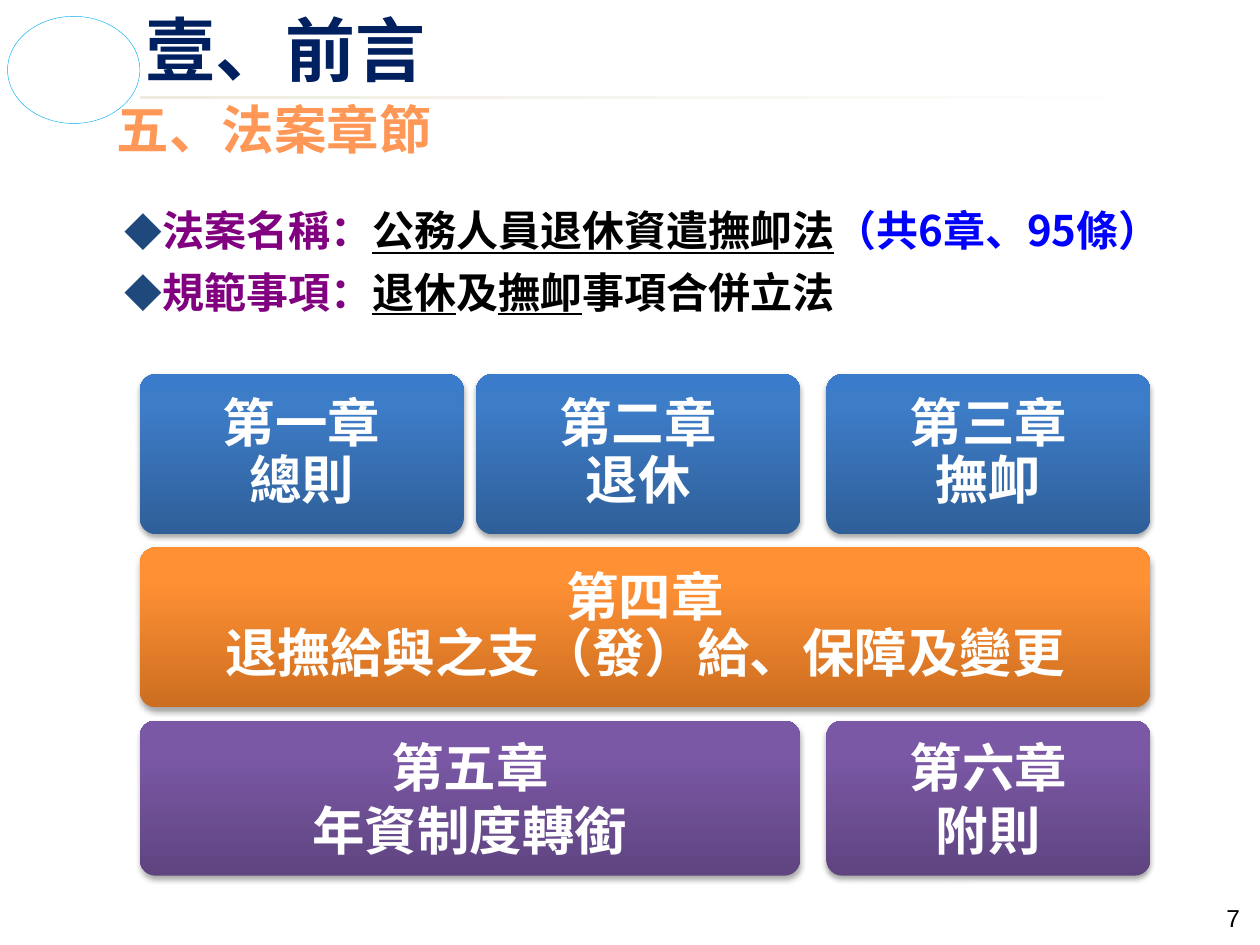
from lxml.etree import SubElement
from pptx import Presentation
from pptx.dml.color import RGBColor
from pptx.enum.shapes import MSO_SHAPE
from pptx.enum.text import MSO_ANCHOR, PP_ALIGN
from pptx.oxml import parse_xml
from pptx.oxml.ns import nsdecls, qn
from pptx.util import Inches, Pt

CJK = "Noto Sans CJK SC"
BLUE = [(0, "2F5F99"), (80, "3D7CC7"), (100, "3A7CCB")]
ORANGE = [(0, "CC6E20"), (80, "FF9034"), (100, "FF9136")]
PURPLE = [(0, "5F4480"), (80, "7B58A6"), (100, "7C57A8")]

LEFT, RIGHT = 1.11, 9.13
CARD_WIDTH = 2.57
SECOND_LEFT, THIRD_LEFT = 3.78, 6.56
ROW_TOP, ROW_PITCH = 2.97, 1.375


def color(hex_string):
    return RGBColor.from_string(hex_string)


def style_font(font, size, name, hex_string, bold=True):
    font.size = Pt(size)
    font.name = name
    font.bold = bold
    font.color.rgb = color(hex_string)
    latin = font._element.find(qn("a:latin"))
    latin.addnext(parse_xml(f'<a:ea {nsdecls("a")} typeface="{CJK}"/>'))


def set_gradient(shape, stops, angle):
    """Fill with (percent, colour) stops; the angle runs clockwise in degrees."""
    stop_xml = "".join(
        f'<a:gs pos="{position * 1000}"><a:srgbClr val="{hex_string}"/></a:gs>'
        for position, hex_string in stops)
    gradient = parse_xml(
        f'<a:gradFill {nsdecls("a")} rotWithShape="1"><a:gsLst>{stop_xml}</a:gsLst>'
        f'<a:lin ang="{angle * 60000}" scaled="0"/></a:gradFill>')
    shape._element.spPr.find(qn("a:prstGeom")).addnext(gradient)


def add_soft_shadow(shape):
    effects = shape._element.spPr.find(qn("a:effectLst"))
    effects.append(parse_xml(
        f'<a:outerShdw {nsdecls("a")} blurRad="40000" dist="23000" dir="5400000" '
        'rotWithShape="0"><a:srgbClr val="000000"><a:alpha val="35000"/>'
        '</a:srgbClr></a:outerShdw>'))


def add_plain_shape(slide, kind, left, top, width, height):
    shape = slide.shapes.add_shape(
        kind, Inches(left), Inches(top), Inches(width), Inches(height))
    shape.shadow.inherit = False
    return shape


def add_decoration(slide):
    bar = add_plain_shape(slide, MSO_SHAPE.RECTANGLE, LEFT, 0.76, 8.77, 0.03)
    set_gradient(bar, [(0, "EEECE1"), (100, "FFFFFF")], 0)
    bar.line.fill.background()
    ring = add_plain_shape(slide, MSO_SHAPE.OVAL, 0.06, 0.13, 1.05, 0.85)
    ring.fill.background()
    ring.line.color.rgb = color("00B0F0")
    ring.line.width = Pt(0.25)


def add_text_box(slide, left, top, width, height):
    box = slide.shapes.add_textbox(
        Inches(left), Inches(top), Inches(width), Inches(height))
    box.text_frame.word_wrap = True
    return box.text_frame


def add_label(slide, place, text, size, name, hex_string, bold=True,
              anchor=MSO_ANCHOR.TOP, align=PP_ALIGN.LEFT):
    frame = add_text_box(slide, *place)
    frame.vertical_anchor = anchor
    paragraph = frame.paragraphs[0]
    paragraph.text = text
    paragraph.alignment = align
    style_font(paragraph.font, size, name, hex_string, bold)


def add_diamond_bullet(paragraph):
    properties = paragraph._p.get_or_add_pPr()
    properties.set("marL", str(Inches(0.29)))
    properties.set("indent", str(-Inches(0.29)))
    bullet_color = SubElement(properties, qn("a:buClr"))
    SubElement(bullet_color, qn("a:srgbClr"), val="1F497D")
    SubElement(properties, qn("a:buSzPct"), val="90000")
    SubElement(properties, qn("a:buFont"), typeface=CJK)
    SubElement(properties, qn("a:buChar"), char="◆")


def add_summary(slide, items):
    """Add bulleted items, each a list of (text, font, colour, underlined)."""
    frame = add_text_box(slide, 0.99, 1.54, 8.6, 1.1)
    frame.margin_left = frame.margin_right = 0
    frame.margin_top = frame.margin_bottom = 0
    for index, runs in enumerate(items):
        paragraph = frame.add_paragraph() if index else frame.paragraphs[0]
        paragraph.line_spacing = Pt(35)
        add_diamond_bullet(paragraph)
        for text, name, hex_string, underlined in runs:
            run = paragraph.add_run()
            run.text = text
            style_font(run.font, 24, name, hex_string)
            run.font.underline = underlined


def add_chapter(slide, row, left, width, height, stops, line_spacing, lines):
    card = add_plain_shape(slide, MSO_SHAPE.ROUNDED_RECTANGLE, left,
                           ROW_TOP + row * ROW_PITCH, width, height)
    card.adjustments[0] = 0.1
    set_gradient(card, stops, 270)
    card.line.fill.background()
    add_soft_shadow(card)
    frame = card.text_frame
    frame.word_wrap = True
    frame.vertical_anchor = MSO_ANCHOR.MIDDLE
    frame.margin_left = frame.margin_right = Inches(0.25)
    frame.margin_top = frame.margin_bottom = 0
    for index, text in enumerate(lines):
        paragraph = frame.add_paragraph() if index else frame.paragraphs[0]
        paragraph.text = text
        paragraph.alignment = PP_ALIGN.CENTER
        paragraph.line_spacing = line_spacing
        style_font(paragraph.font, 30, "Calibri", "FFFFFF")


def main():
    presentation = Presentation()
    presentation.slide_width = Inches(10)
    presentation.slide_height = Inches(7.5)
    slide = presentation.slides.add_slide(presentation.slide_layouts[6])

    add_decoration(slide)
    add_label(slide, (1.06, 0.03, 8.59, 0.71), "壹、前言", 40, CJK, "002060",
              anchor=MSO_ANCHOR.MIDDLE)
    add_label(slide, (0.83, 0.72, 8.54, 0.64), "五、法案章節", 30, CJK, "FF9856")
    add_summary(slide, [
        [("法案名稱：", "Karla", "800080", False),
         ("公務人員退休資遣撫卹法", "Karla", "000000", True),
         ("（共6章、95條）", CJK, "0000FF", False)],
        [("規範事項：", "Karla", "800080", False),
         ("退休", "Karla", "000000", True),
         ("及", "Karla", "000000", False),
         ("撫卹", "Karla", "000000", True),
         ("事項合併立法", "Karla", "000000", False)],
    ])

    first_row = [(LEFT, "第一章", "總則"), (SECOND_LEFT, "第二章", "退休"),
                 (THIRD_LEFT, "第三章", "撫卹")]
    for left, *lines in first_row:
        add_chapter(slide, 0, left, CARD_WIDTH, 1.27, BLUE, 0.9, lines)
    add_chapter(slide, 1, LEFT, RIGHT - LEFT, 1.27, ORANGE, 0.9,
                ["第四章", "退撫給與之支（發）給、保障及變更"])
    add_chapter(slide, 2, LEFT, SECOND_LEFT + CARD_WIDTH - LEFT, 1.23, PURPLE, 1.0,
                ["第五章", "年資制度轉銜"])
    add_chapter(slide, 2, THIRD_LEFT, CARD_WIDTH, 1.23, PURPLE, 1.0, ["第六章", "附則"])

    add_label(slide, (9.49, 7.12, 0.45, 0.36), "7", 14, "Arial", "000000",
              bold=False, align=PP_ALIGN.RIGHT)
    presentation.save("out.pptx")


if __name__ == "__main__":
    main()
